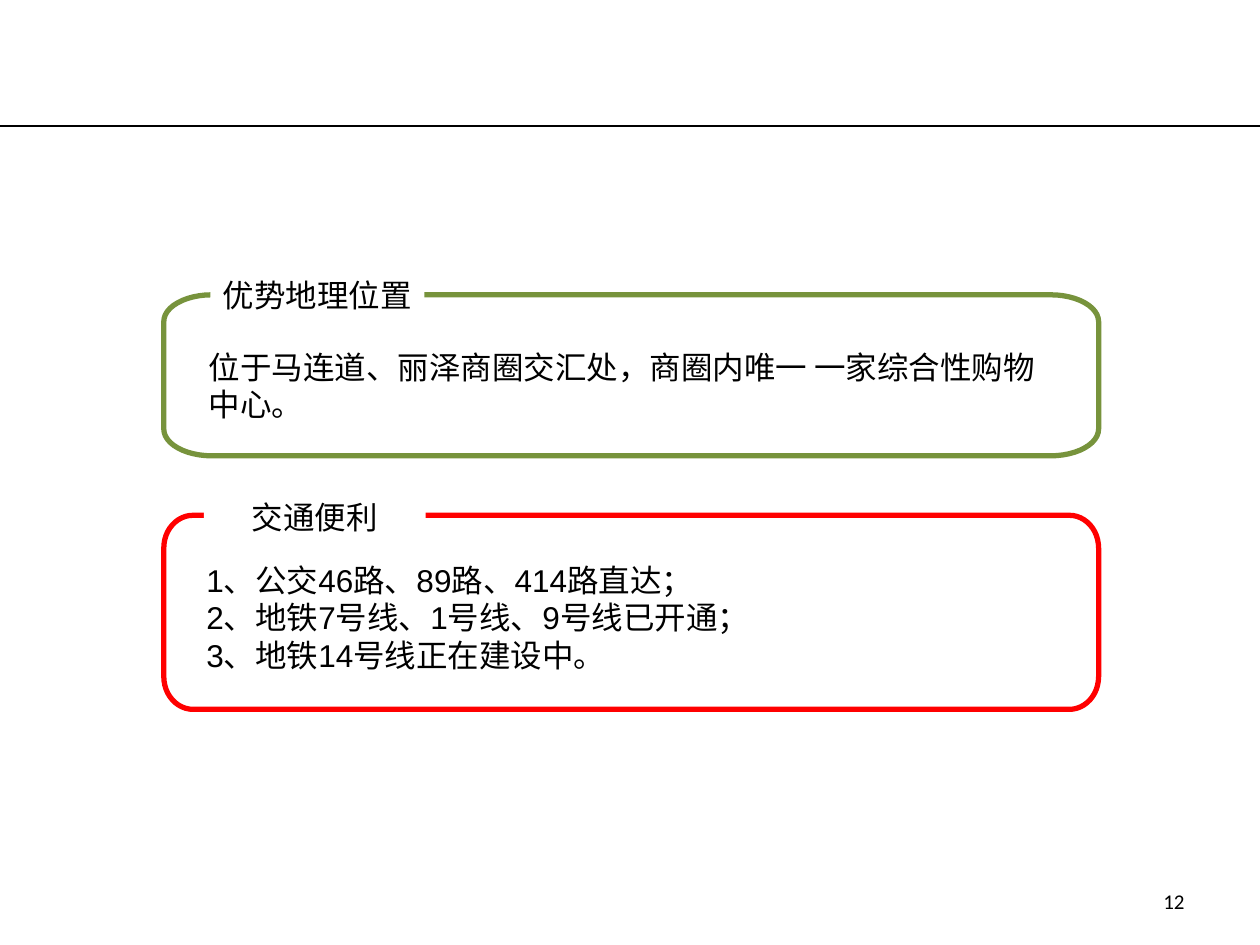
import math
from pptx import Presentation
from pptx.dml.color import RGBColor
from pptx.enum import shapes, text
from pptx.util import Pt
from lxml import etree
from pptx.oxml.ns import qn

BLACK = RGBColor(0x00, 0x00, 0x00)
WHITE = RGBColor(0xFF, 0xFF, 0xFF)
GREEN = RGBColor(0x77, 0x93, 0x3C)
RED = RGBColor(0xFF, 0x00, 0x00)
LEFT, WIDTH = 93.6, 534.2


def add_frame(s, top, height, rx, ry, color):
    corners = [(LEFT + rx, top + ry, 180),
               (LEFT + WIDTH - rx, top + ry, 270),
               (LEFT + WIDTH - rx, top + height - ry, 0),
               (LEFT + rx, top + height - ry, 90)]
    pts = []
    for cx, cy, start in corners:
        for step in range(13):
            a = math.radians(start + step * 7.5)
            pts.append((Pt(cx + rx * math.cos(a)), Pt(cy + ry * math.sin(a))))
    fb = s.shapes.build_freeform(*pts[0])
    fb.add_line_segments(pts[1:], close=True)
    sp = fb.convert_to_shape()
    sp.shadow.inherit = False
    sp.fill.background()
    sp.line.color.rgb = color
    sp.line.width = Pt(3)


def write(sp, lines, align, anchor, wrap, font):
    tf = sp.text_frame
    tf.word_wrap = wrap
    tf.vertical_anchor = anchor
    for i, line in enumerate(lines):
        p = tf.paragraphs[0] if i == 0 else tf.add_paragraph()
        p.alignment = align
        r = p.add_run()
        r.text = line
        for name, value in font.items():
            setattr(r.font, name, value)
        r.font.color.rgb = BLACK


prs = Presentation()
prs.slide_width, prs.slide_height = Pt(720), Pt(540)
s = prs.slides.add_slide(prs.slide_layouts[6])

rule = s.shapes.add_connector(shapes.MSO_CONNECTOR.STRAIGHT, Pt(0), Pt(72), Pt(720), Pt(72))
rule.line.color.rgb = BLACK
rule.line.width = Pt(0.75)
etree.SubElement(rule._element.spPr, qn("a:effectLst"))

number = s.shapes.add_textbox(Pt(516), Pt(500.5), Pt(168), Pt(28.75))
write(number, ["12"], text.PP_ALIGN.RIGHT, text.MSO_ANCHOR.MIDDLE, True,
      {"size": Pt(12), "name": "Calibri"})

panels = [
    {"frame": (168.5, 92, 27.4, 15.3, GREEN),
     "label": ("优势地理位置", 120.2, 154.1, 122.4),
     "body": (112.3, 195.1, 496.8, 50.9),
     "lines": ["位于马连道、丽泽商圈交汇处，商圈内唯一 一家综合性购物 中心。"]},
    {"frame": (294.5, 110.9, 16.7, 18.7, RED),
     "label": ("交通便利", 116.6, 281, 126.7),
     "body": (110.9, 316.8, 497.5, 72.7),
     "lines": ["1、公交46路、89路、414路直达；",
               "2、地铁7号线、1号线、9号线已开通；",
               "3、地铁14号线正在建设中。"]},
]

for panel in panels:
    add_frame(s, *panel["frame"])

for panel in panels:
    title, x, y, w = panel["label"]
    sp = s.shapes.add_shape(shapes.MSO_SHAPE.RECTANGLE, Pt(x), Pt(y), Pt(w), Pt(29))
    sp.shadow.inherit = False
    sp.fill.solid()
    sp.fill.fore_color.rgb = WHITE
    sp.line.fill.background()
    write(sp, [title], text.PP_ALIGN.CENTER, text.MSO_ANCHOR.TOP, False,
          {"size": Pt(18), "name": "Calibri"})

    body = s.shapes.add_textbox(*(Pt(v) for v in panel["body"]))
    write(body, panel["lines"], text.PP_ALIGN.LEFT, text.MSO_ANCHOR.TOP, True,
          {"size": Pt(18), "name": "Arial"})

prs.save("out.pptx")
